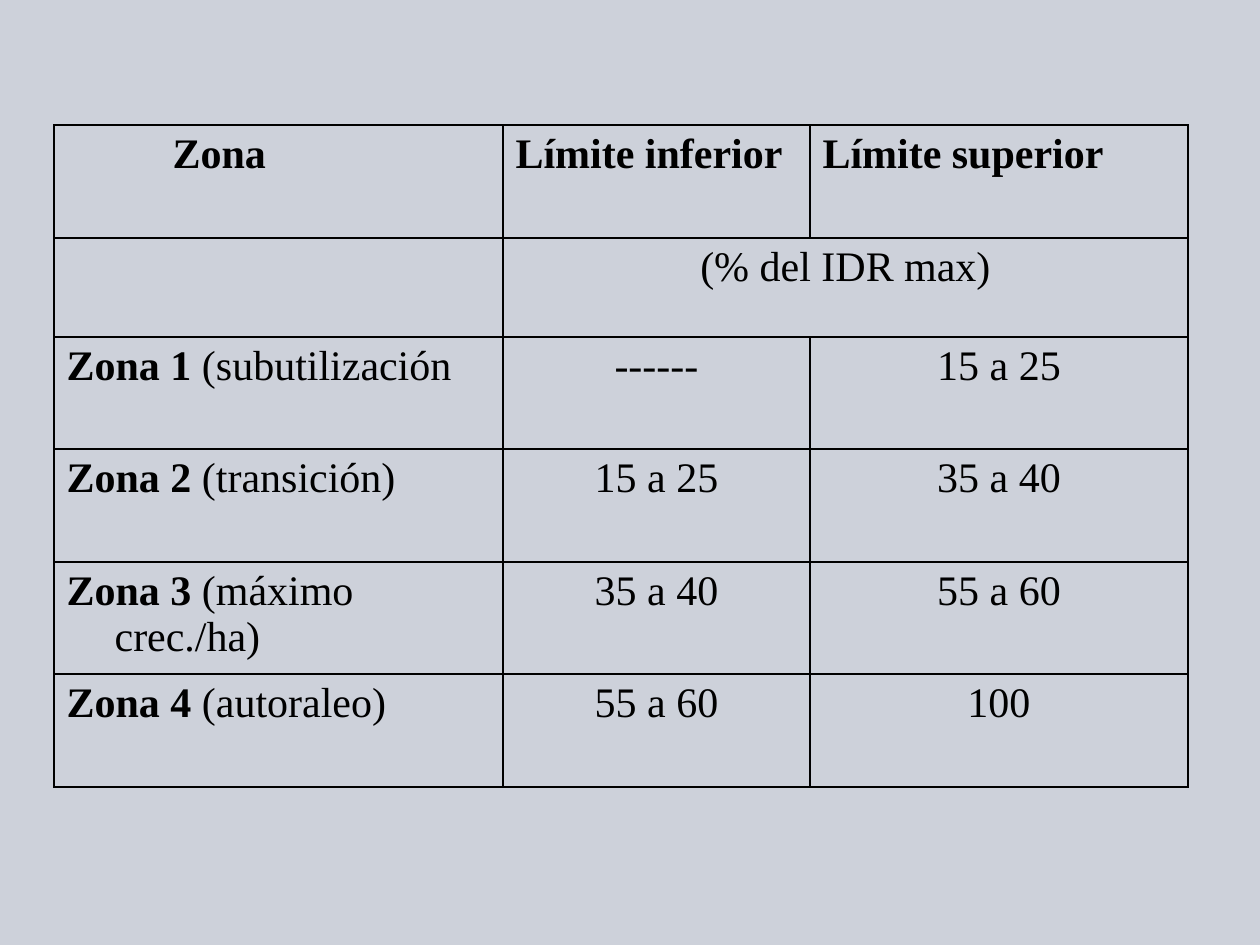
from dataclasses import dataclass

from lxml.etree import SubElement
from pptx import Presentation
from pptx.dml.color import RGBColor
from pptx.enum.text import PP_ALIGN as Align
from pptx.oxml.ns import qn
from pptx.util import Pt

EMU_PER_PX = 914400 // 126
SLIDE_SIZE = (1260, 945)
TABLE_ORIGIN = (54, 125)
COLUMN_WIDTHS = (449, 307, 378)
ROW_HEIGHTS = (113, 99, 112, 113, 112, 113)
HANGING = 48
ZONE_HEADING_INDENT = 106

HEADINGS = ("Zona", "Límite inferior", "Límite superior")
UNIT = "(% del IDR max)"
ZONES = (
    ("Zona 1", " (subutilización", "------", "15 a 25"),
    ("Zona 2", " (transición)", "15 a 25", "35 a 40"),
    ("Zona 3", " (máximo crec./ha)", "35 a 40", "55 a 60"),
    ("Zona 4", " (autoraleo)", "55 a 60", "100"),
)


@dataclass(frozen=True)
class Theme:
    background: str = "CDD1DA"
    ink: str = "000000"
    font: str = "Times New Roman"
    text_size: int = 24
    border_width: int = 1


def px(length):
    return length * EMU_PER_PX


class SlideBuilder:
    """Draws themed elements on the current slide."""

    def __init__(self, slide, theme):
        self.slide = slide
        self.theme = theme

    def background(self):
        fill = self.slide.background.fill
        fill.solid()
        fill.fore_color.rgb = RGBColor.from_string(self.theme.background)

    def table(self, origin, widths, heights):
        frame = self.slide.shapes.add_table(
            len(heights), len(widths), *map(px, origin), px(sum(widths)), px(sum(heights))
        )
        grid = frame.table
        grid.first_row = grid.horz_banding = False
        for column, width in zip(grid.columns, widths):
            column.width = px(width)
        for row, height in zip(grid.rows, heights):
            row.height = px(height)
        for cell in grid.iter_cells():
            self.borders(cell)
            cell.fill.background()
        return grid

    def borders(self, cell):
        properties = cell._tc.get_or_add_tcPr()
        for side in ("a:lnL", "a:lnR", "a:lnT", "a:lnB"):
            line = SubElement(properties, qn(side), w=str(Pt(self.theme.border_width)))
            solid = SubElement(line, qn("a:solidFill"))
            SubElement(solid, qn("a:srgbClr"), val=self.theme.ink)

    def cell_text(self, cell, bold="", plain="", align=Align.LEFT, margin=0, indent=0):
        paragraph = cell.text_frame.paragraphs[0]
        paragraph.alignment = align
        properties = paragraph._p.get_or_add_pPr()
        properties.set("marL", str(px(margin)))
        properties.set("indent", str(px(indent)))
        for words, is_bold in ((bold, True), (plain, False)):
            if words:
                run = paragraph.add_run()
                run.text = words
                run.font.name = self.theme.font
                run.font.size = Pt(self.theme.text_size)
                run.font.bold = is_bold
                run.font.color.rgb = RGBColor.from_string(self.theme.ink)


def main():
    presentation = Presentation()
    presentation.slide_width, presentation.slide_height = map(px, SLIDE_SIZE)
    slide = presentation.slides.add_slide(presentation.slide_layouts[6])
    builder = SlideBuilder(slide, Theme())
    builder.background()
    limits = builder.table(TABLE_ORIGIN, COLUMN_WIDTHS, ROW_HEIGHTS)

    for column, heading in enumerate(HEADINGS):
        margin = 0 if column else ZONE_HEADING_INDENT
        builder.cell_text(limits.cell(0, column), bold=heading, margin=margin)

    limits.cell(1, 1).merge(limits.cell(1, 2))
    builder.cell_text(limits.cell(1, 1), plain=UNIT, align=Align.CENTER)

    for row, (zone, description, *bounds) in enumerate(ZONES, start=2):
        builder.cell_text(limits.cell(row, 0), zone, description, margin=HANGING, indent=-HANGING)
        for column, bound in enumerate(bounds, start=1):
            builder.cell_text(limits.cell(row, column), plain=bound, align=Align.CENTER)

    presentation.save("out.pptx")


if __name__ == "__main__":
    main()
